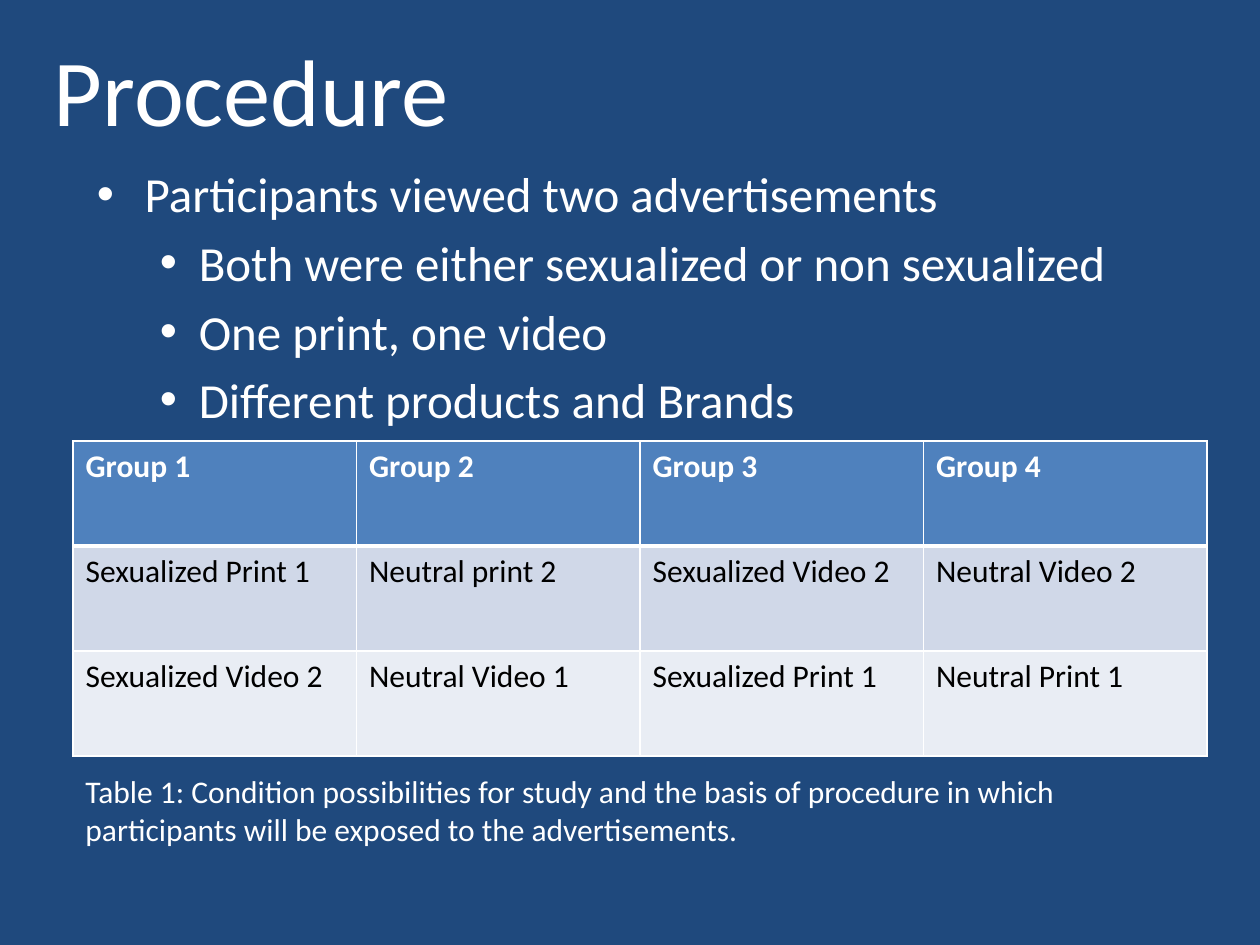
"""Build the Procedure slide with its bullets, group table and caption."""
import lxml.etree
import pptx
import pptx.dml.color
import pptx.enum.text
import pptx.oxml.ns
import pptx.util

Inches = pptx.util.Inches
WHITE = "FFFFFF"
BULLETS = [
    ("Participants viewed two advertisements", 0),
    ("Both were either sexualized or non sexualized", 1),
    ("One print, one video", 1),
    ("Different products and Brands", 1),
]
BULLET_INDENTS = [(0.38, -0.38), (0.81, -0.31)]
GROUPS = [
    ["Group 1", "Group 2", "Group 3", "Group 4"],
    ["Sexualized Print 1", "Neutral print 2", "Sexualized Video 2", "Neutral Video 2"],
    ["Sexualized Video 2", "Neutral Video 1", "Sexualized Print 1", "Neutral Print 1"],
]
ROW_FILLS = ["4F81BD", "D0D8E8", "E9EDF4"]
CAPTION = (
    "Table 1: Condition possibilities for study and the basis of procedure "
    "in which participants will be exposed to the advertisements."
)


def rgb(value):
    """Turn a hex string into a colour."""
    return pptx.dml.color.RGBColor.from_string(value)


def add_element(parent, tag, **attributes):
    """Append a drawing element with the given attributes."""
    element = lxml.etree.SubElement(parent, pptx.oxml.ns.qn(tag))
    for name, value in attributes.items():
        element.set(name, str(value))
    return element


def write_text(para, text, size=18, color=WHITE, bold=False):
    """Add one formatted span to a paragraph."""
    span = para.add_run()
    span.text = text
    span.font.name = "Calibri"
    span.font.size = pptx.util.Pt(size)
    span.font.bold = bold
    span.font.color.rgb = rgb(color)


def add_box(page, left, top, width, height):
    """Add a wrapping text box and return its text frame."""
    box = page.shapes.add_textbox(
        Inches(left), Inches(top), Inches(width), Inches(height)
    )
    box.text_frame.word_wrap = True
    return box.text_frame


def add_bullets(frame, items):
    """Fill a text frame with bulleted paragraphs."""
    for index, (text, level) in enumerate(items):
        para = frame.add_paragraph() if index else frame.paragraphs[0]
        para.level = level
        para.space_before = pptx.util.Pt(5.6)
        margin, indent = BULLET_INDENTS[level]
        properties = para._p.get_or_add_pPr()
        properties.set("marL", str(Inches(margin)))
        properties.set("indent", str(Inches(indent)))
        add_element(properties, "a:buFont", typeface="Arial")
        add_element(properties, "a:buChar", char="•")
        write_text(para, text, size=28)


def style_cell(cell, fill, widths):
    """Give a cell white borders of the given widths and a solid fill."""
    properties = cell._tc.get_or_add_tcPr()
    for side, width in widths.items():
        line = add_element(properties, f"a:ln{side}", w=pptx.util.Pt(width))
        add_element(add_element(line, "a:solidFill"), "a:srgbClr", val=WHITE)
    cell.fill.solid()
    cell.fill.fore_color.rgb = rgb(fill)


def add_group_table(page):
    """Add the table of conditions by group."""
    table = page.shapes.add_table(
        len(GROUPS), len(GROUPS[0]), Inches(0.58), Inches(3.5), Inches(9), Inches(2.5)
    ).table
    for row, (texts, fill) in enumerate(zip(GROUPS, ROW_FILLS)):
        header = row == 0
        widths = {"L": 1, "R": 1, "T": 3 if row == 1 else 1, "B": 3 if header else 1}
        for column, text in enumerate(texts):
            cell = table.cell(row, column)
            style_cell(cell, fill, widths)
            write_text(
                cell.text_frame.paragraphs[0],
                text,
                color=WHITE if header else "000000",
                bold=header,
            )


def main():
    """Build and save the deck."""
    deck = pptx.Presentation()
    deck.slide_width, deck.slide_height = Inches(10), Inches(7.5)
    page = deck.slides.add_slide(deck.slide_layouts[6])
    page.background.fill.solid()
    page.background.fill.fore_color.rgb = rgb("1F497D")

    title = add_box(page, 0.33, 0.08, 9, 1.25)
    title.vertical_anchor = pptx.enum.text.MSO_ANCHOR.MIDDLE
    write_text(title.paragraphs[0], "Procedure", size=54)
    add_bullets(add_box(page, 0.67, 1.25, 9, 4.95), BULLETS)
    add_group_table(page)
    caption = add_box(page, 0.58, 6.08, 9, 1.01)
    write_text(caption.paragraphs[0], CAPTION)
    deck.save("out.pptx")


if __name__ == "__main__":
    main()
